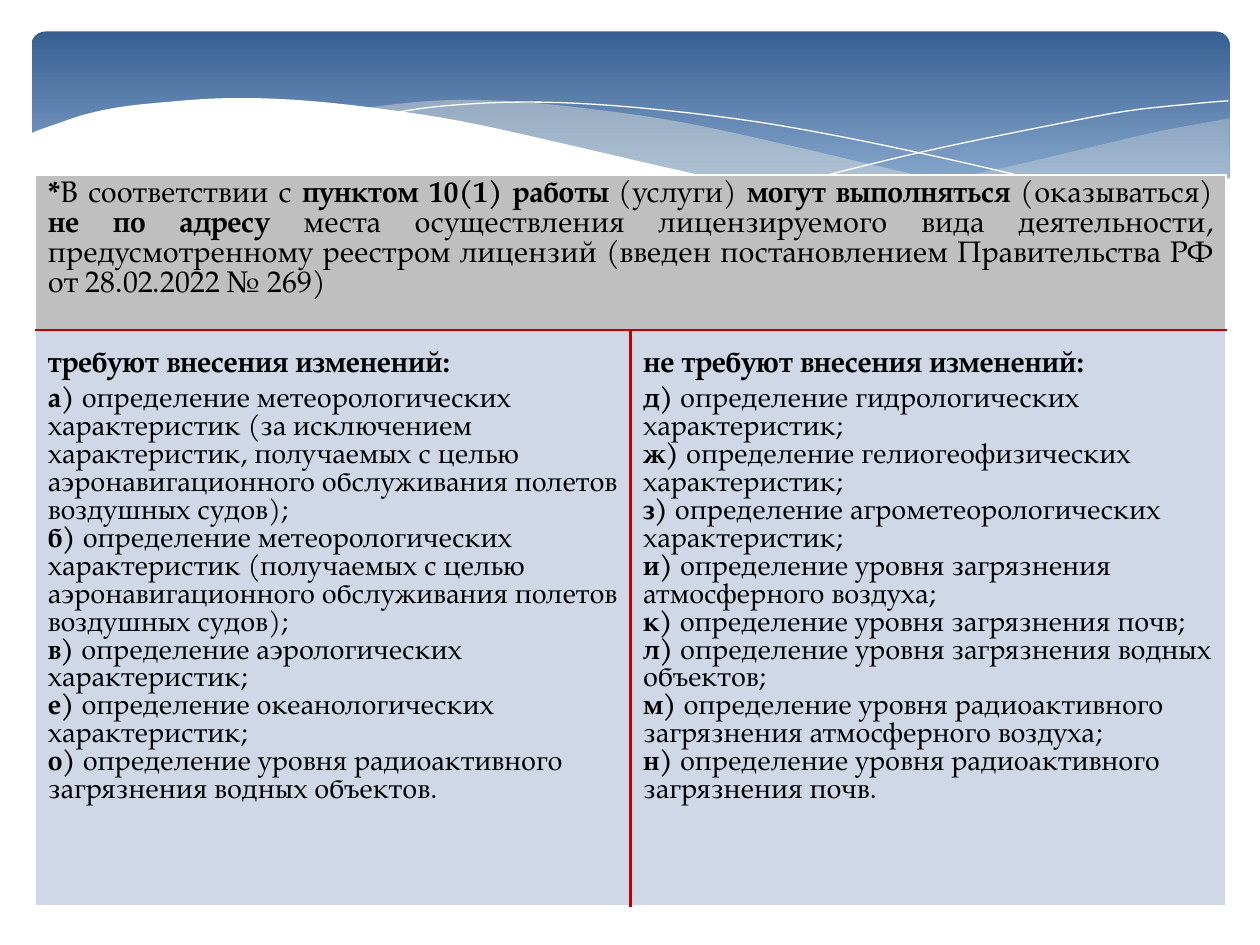
from lxml.etree import SubElement
from pptx import Presentation
from pptx.dml.color import RGBColor
from pptx.enum.shapes import MSO_SHAPE
from pptx.enum.text import PP_ALIGN
from pptx.oxml import parse_xml
from pptx.oxml.ns import nsdecls, qn
from pptx.util import Inches, Pt

NAVY = RGBColor(0x37, 0x60, 0x92)
SKY = RGBColor(0x95, 0xB3, 0xD7)
CREAM = RGBColor(0xEE, 0xEC, 0xE1)
WHITE = RGBColor(0xFF, 0xFF, 0xFF)
BLACK = RGBColor(0, 0, 0)
RED = RGBColor(0xC0, 0, 0)
GREY = RGBColor(0xBF, 0xBF, 0xBF)
PALE = RGBColor(0xD0, 0xD8, 0xE8)
FONT = "TeX Gyre Pagella"

RIGHT_TOP = [(9.51, .69), (8.96, .79), (8.36, .93), (7.54, 1.12), (6.36, 1.35)]
RIGHT_LOW = [(6.36, 1.35), (7.07, 1.42), (7.67, 1.47), (8.19, 1.45),
             (8.72, 1.38), (9.24, 1.27), (9.51, 1.16)]
MID_TOP = [(2.61, .61), (3.19, .55), (3.74, .55), (4.4, .61), (5.16, .72),
           (6.04, .91), (6.81, 1.09), (7.5, 1.24), (8.12, 1.34), (8.68, 1.42)]
MID_LOW = [(8.68, 1.42), (8.13, 1.47), (7.48, 1.46), (6.7, 1.4), (5.76, 1.25),
           (5.05, 1.1), (4.24, .91), (3.58, .76), (2.98, .65), (2.61, .61)]
FALL = [(2.84, .65), (3.28, .59), (3.91, .56), (4.64, .59), (5.57, .69),
        (6.4, .83), (7.35, 1.03), (8.06, 1.2), (8.82, 1.41)]
RISE = [(5.88, 1.26), (6.47, 1.1), (7.23, .92), (8.11, .74), (8.7, .63),
        (9.26, .57), (9.5, .55)]
FRONT = [(9.52, 1.16), (9.05, 1.32), (8.5, 1.41), (7.98, 1.46), (7.36, 1.45),
         (6.63, 1.37), (5.78, 1.24), (5.04, 1.08), (4.22, .89), (3.4, .71),
         (2.67, .6), (2.05, .54), (1.52, .53), (1.07, .56), (.7, .6),
         (.42, .66), (.21, .73), (.04, .79), (-.02, .82)]
BASE = [(-.02, 1.99), (9.52, 1.99)]

HEAD = ("|*|В соответствии с |пунктом 10(1) работы |(услуги) |могут выполняться "
        "|(оказываться) |не по адресу| места осуществления лицензируемого вида "
        "деятельности, предусмотренному реестром лицензий (введен постановлением "
        "Правительства РФ от 28.02.2022 № 269)")
NEED = ["|требуют внесения изменений:",
        "|а)| определение метеорологических характеристик (за исключением "
        "характеристик, получаемых с целью аэронавигационного обслуживания "
        "полетов воздушных судов);",
        "|б)| определение метеорологических характеристик (получаемых с целью "
        "аэронавигационного обслуживания полетов воздушных судов);",
        "|в)| определение аэрологических характеристик;",
        "|е) |определение океанологических характеристик;",
        "|о)| определение уровня радиоактивного загрязнения водных объектов."]
FREE = ["|не требуют внесения изменений:",
        "|д)| определение гидрологических характеристик;",
        "|ж)| определение гелиогеофизических характеристик;",
        "|з)| определение агрометеорологических характеристик;",
        "|и)| определение уровня загрязнения атмосферного воздуха;",
        "|к)| определение уровня загрязнения почв;",
        "|л)| определение уровня загрязнения водных объектов;",
        "|м)| определение уровня радиоактивного загрязнения атмосферного воздуха;",
        "|н)| определение уровня радиоактивного загрязнения почв."]


def write(para, text, size=16, align=PP_ALIGN.LEFT, after=0):
    """Fill a paragraph, with bold turned on and off at each bar."""
    para.alignment = align
    para.line_spacing = Pt(size)
    para.space_before, para.space_after = Pt(0), Pt(after)
    for i, part in enumerate(text.split("|")):
        if part:
            run = para.add_run()
            run.text = part
            font = run.font
            font.name, font.size, font.bold = FONT, Pt(size), i % 2 == 1
            font.color.rgb = BLACK


def bend(knots, steps=5):
    """Return points of a smooth curve through the knots."""
    ends = [knots[0], *knots, knots[-1]]
    out = [knots[0]]
    for a, b, c, d in zip(ends, ends[1:], ends[2:], ends[3:]):
        for k in range(1, steps + 1):
            t = k / steps
            out.append(tuple(
                (2 * q + (r - p) * t + (2 * p - 5 * q + 4 * r - s) * t ** 2
                 + (3 * q - p - 3 * r + s) * t ** 3) / 2
                for p, q, r, s in zip(a, b, c, d)))
    return out


def wave(slide, box, points, fill=None, alpha=100):
    """Draw a filled wave, or a thin white curve when there is no fill."""
    spots = [(Inches(box[0] + x), Inches(box[1] + y)) for x, y in points]
    pen = slide.shapes.build_freeform(*spots[0])
    pen.add_line_segments(spots[1:], close=fill is not None)
    shape = pen.convert_to_shape()
    shape.shadow.inherit = False
    if fill is None:
        shape.fill.background()
        shape.line.color.rgb = WHITE
        shape.line.width = Pt(0)
        return
    shape.fill.solid()
    shape.fill.fore_color.rgb = fill
    shape.line.fill.background()
    if alpha < 100:
        tint = next(shape._element.spPr.iter(qn("a:srgbClr")))
        SubElement(tint, qn("a:alpha")).set("val", str(alpha * 1000))


def banner(slide, box):
    """Draw the blue band and its waves."""
    band = slide.shapes.add_shape(MSO_SHAPE.ROUNDED_RECTANGLE, *map(Inches, box))
    band.adjustments[0] = 0.07
    band.shadow.inherit = False
    band.line.fill.background()
    band.fill.gradient()
    band.fill.gradient_angle = 270
    for stop, tone, place in zip(band.fill.gradient_stops, (NAVY, SKY), (0, .9)):
        stop.color.rgb, stop.position = tone, place
    wave(slide, box, bend(RIGHT_TOP) + bend(RIGHT_LOW), CREAM, 29)
    wave(slide, box, bend(MID_TOP) + bend(MID_LOW), CREAM, 40)
    wave(slide, box, bend(FALL))
    wave(slide, box, bend(RISE))
    wave(slide, box, bend(FRONT) + BASE, WHITE)


def edge(cell, *sides):
    """Set the left, right, top and bottom borders of a cell."""
    props = cell._tc.get_or_add_tcPr()
    for i, (tag, (tone, width)) in enumerate(zip("LRTB", sides)):
        props.insert(i, parse_xml(
            f'<a:ln{tag} {nsdecls("a")} w="{Pt(width)}"><a:solidFill>'
            f'<a:srgbClr val="{tone}"/></a:solidFill></a:ln{tag}>'))


def paint(cell, fill, *sides):
    """Fill a cell and draw its borders."""
    cell.fill.solid()
    cell.fill.fore_color.rgb = fill
    edge(cell, *sides)


def column(cell, lines):
    """Write a heading and its items in a cell."""
    cell.margin_top = Inches(0.16)
    frame = cell.text_frame
    write(frame.paragraphs[0], lines[0], size=17, after=4)
    for line in lines[1:]:
        write(frame.add_paragraph(), line)


def grid(slide, box):
    """Place the table with its header and two lists."""
    table = slide.shapes.add_table(2, 2, *map(Inches, box)).table
    table.first_row = table.horz_banding = False
    top = 1.23
    for row, high in zip(table.rows, (top, box[3] - top)):
        row.height = Inches(high)
    for col in table.columns:
        col.width = Inches(box[2] / 2)
    plain, rule, split = (WHITE, 1), (RED, 1), (RED, 1.5)
    for i in range(2):
        paint(table.cell(0, i), GREY, plain, plain, plain, rule)
    paint(table.cell(1, 0), PALE, plain, split, rule, plain)
    paint(table.cell(1, 1), PALE, split, plain, rule, plain)
    head = table.cell(0, 0)
    head.merge(table.cell(0, 1))
    write(head.text_frame.paragraphs[0], HEAD, size=17, align=PP_ALIGN.JUSTIFY)
    for i, lines in enumerate((NEED, FREE)):
        column(table.cell(1, i), lines)


def main():
    """Build the slide and save it."""
    deck = Presentation()
    deck.slide_width, deck.slide_height = Inches(10), Inches(7.5)
    slide = deck.slides.add_slide(deck.slide_layouts[6])
    banner(slide, (0.25, 0.25, 9.51, 1.56))
    grid(slide, (0.28, 1.39, 9.45, 5.8))
    deck.save("out.pptx")


if __name__ == "__main__":
    main()
